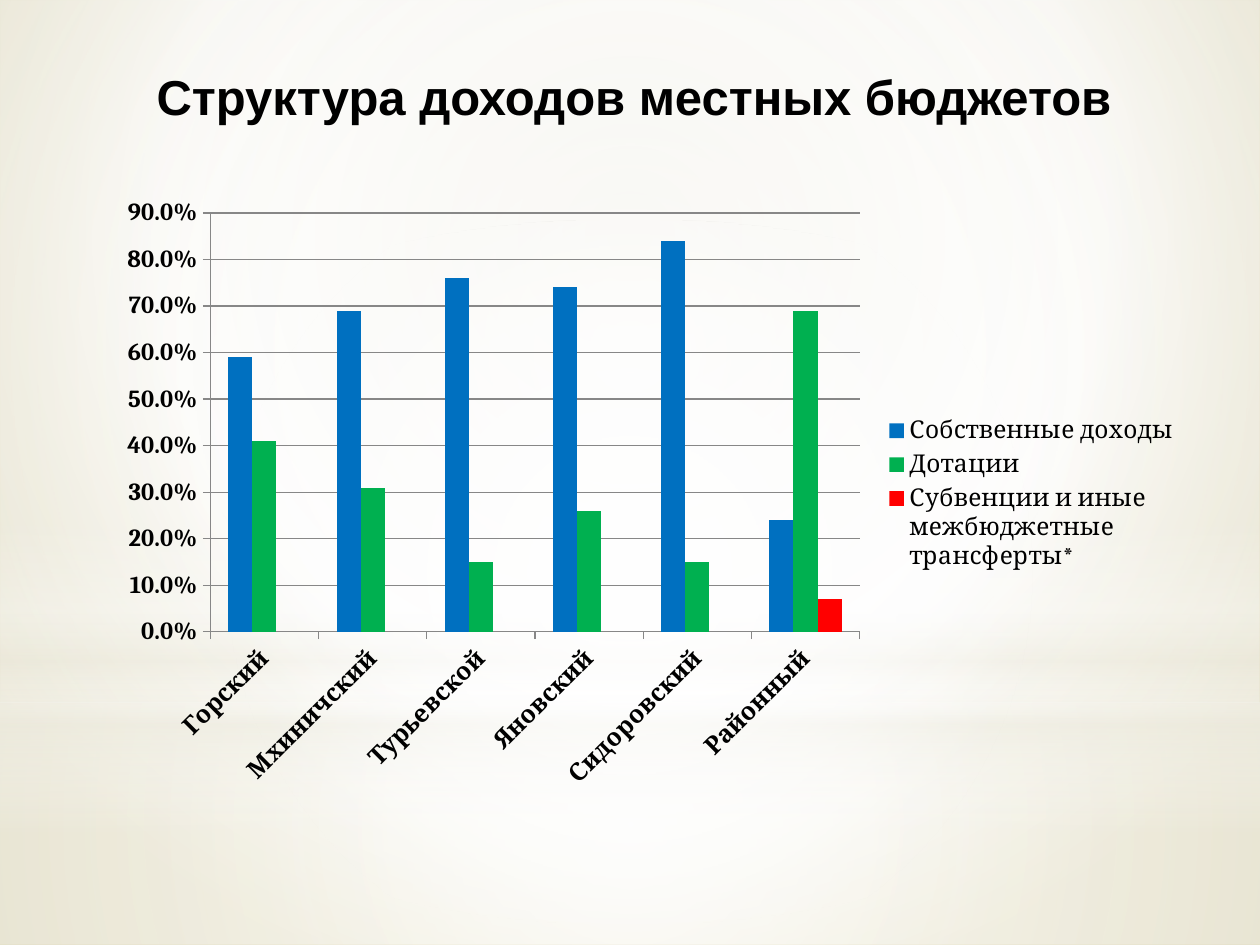
from dataclasses import dataclass

from lxml.etree import SubElement
from pptx import Presentation
from pptx.chart.data import CategoryChartData
from pptx.dml.color import RGBColor
from pptx.enum.chart import XL_CHART_TYPE, XL_LEGEND_POSITION, XL_TICK_MARK
from pptx.enum.shapes import MSO_SHAPE
from pptx.enum.text import MSO_ANCHOR, PP_ALIGN
from pptx.oxml.ns import qn
from pptx.util import Pt


@dataclass(frozen=True)
class Theme:
    white: str = "FFFFFF"
    cream: str = "EEECE1"
    sand: str = "E7E4D4"
    khaki: str = "D5CC9F"
    text: str = "000000"
    grid: str = "878787"
    series: tuple = ("0070C0", "00B050", "FF0000")
    title_font: str = "Arial"
    chart_font: str = "Cambria"
    title_size: int = 28
    label_size: int = 14


T = Theme()
W, H = 1260, 945
CENTRE = (50, 50, 50, 50)
GLOWS = [
    (MSO_SHAPE.RECTANGLE, (0, 703, W, 242),
     [(0, T.white, 91), (37, T.white, 76), (100, T.cream, 79)], CENTRE),
    (MSO_SHAPE.RECTANGLE, (0, 0, W, 703),
     [(0, T.white, 89), (48, T.white, 62), (100, T.cream, 79)], CENTRE),
    (MSO_SHAPE.RECTANGLE, (0, 519, W, 315),
     [(0, T.white, 0), (29, T.white, 30), (45, T.cream, 40),
      (55, T.white, 26), (65, T.cream, 60), (100, T.white, 0)], None),
    (MSO_SHAPE.OVAL, (0, 220, W, 703),
     [(0, T.white, 100), (56, T.white, 0)], CENTRE),
]
DISTRICTS = ["Горский", "Мхиничский", "Турьевской", "Яновский", "Сидоровский", "Районный"]
INCOME = {
    "Собственные доходы": [0.59, 0.69, 0.76, 0.74, 0.84, 0.24],
    "Дотации": [0.41, 0.31, 0.15, 0.26, 0.15, 0.69],
    "Субвенции и иные межбюджетные трансферты*": [None] * 5 + [0.07],
}


def px(n):
    return round(n * 914400 / 126)


def rgb(color):
    return RGBColor.from_string(color)


def set_gradient(fill, owner, stops, focus):
    fill.gradient()
    grad = next(owner.iter(qn("a:gradFill")))
    for child in list(grad):
        grad.remove(child)
    gs_list = SubElement(grad, qn("a:gsLst"))
    for pos, color, opacity in stops:
        gs = SubElement(gs_list, qn("a:gs"), pos=str(pos * 1000))
        clr = SubElement(gs, qn("a:srgbClr"), val=color)
        SubElement(clr, qn("a:alpha"), val=str(opacity * 1000))
    if focus:
        circle = SubElement(grad, qn("a:path"), path="circle")
        sides = {side: str(v * 1000) for side, v in zip("ltrb", focus)}
        SubElement(circle, qn("a:fillToRect"), **sides)
    else:
        SubElement(grad, qn("a:lin"), ang="5400000", scaled="0")


def add_backdrop(s):
    stops = [(0, T.sand, 100), (60, T.white, 100), (100, T.khaki, 100)]
    set_gradient(s.background.fill, s.element, stops, (20, 10, 20, 60))
    for kind, box, stops, focus in GLOWS:
        sp = s.shapes.add_shape(kind, *map(px, box))
        sp.shadow.inherit = False
        sp.line.fill.background()
        set_gradient(sp.fill, sp.element, stops, focus)


def add_title(s, box, text):
    sp = s.shapes.title
    sp.left, sp.top, sp.width, sp.height = map(px, box)
    s.shapes.element.append(sp.element)
    tf = sp.text_frame
    tf.text = text
    tf.word_wrap = True
    tf.vertical_anchor = MSO_ANCHOR.TOP
    tf.margin_top = px(11)
    p = tf.paragraphs[0]
    p.alignment = PP_ALIGN.LEFT
    p.font.name = T.title_font
    p.font.size = Pt(T.title_size)
    p.font.bold = True
    p.font.color.rgb = rgb(T.text)


def place_plot(chart, box, plot):
    area = chart.element.chart.plotArea
    for old in area.findall(qn("c:layout")):
        area.remove(old)
    layout = SubElement(area, qn("c:layout"))
    area.insert(0, layout)
    manual = SubElement(layout, qn("c:manualLayout"))
    left, top, width, height = box
    x, y, w, h = plot
    SubElement(manual, qn("c:layoutTarget"), val="inner")
    for name in "xy":
        SubElement(manual, qn(f"c:{name}Mode"), val="edge")
    shares = (x / width, y / height, w / width, h / height)
    for name, share in zip("xywh", shares):
        SubElement(manual, qn(f"c:{name}"), val=f"{share:.3f}")


def style_axis(axis):
    axis.major_tick_mark = XL_TICK_MARK.OUTSIDE
    axis.minor_tick_mark = XL_TICK_MARK.NONE
    axis.format.line.color.rgb = rgb(T.grid)
    axis.tick_labels.font.size = Pt(T.label_size)
    axis.tick_labels.font.bold = True


def add_income_chart(s, box):
    data = CategoryChartData(number_format="0.0%")
    data.categories = DISTRICTS
    for name, values in INCOME.items():
        data.add_series(name, values)
    chart = s.shapes.add_chart(XL_CHART_TYPE.COLUMN_CLUSTERED, *map(px, box), data).chart
    chart.has_title = False
    chart.font.name = T.chart_font
    chart.font.size = Pt(T.label_size)
    chart.font.color.rgb = rgb(T.text)
    place_plot(chart, box, (104, 27, 649, 419))

    bars = chart.plots[0]
    bars.vary_by_categories = False
    bars.gap_width = 150
    bars.overlap = 0
    for series, color in zip(bars.series, T.series):
        series.format.fill.solid()
        series.format.fill.fore_color.rgb = rgb(color)

    districts, share = chart.category_axis, chart.value_axis
    style_axis(districts)
    style_axis(share)
    districts.tick_labels.font.fill.solid()
    districts.tick_labels.font.color.rgb = rgb(T.text)
    districts._element.txPr.bodyPr.set("rot", "-2700000")
    share.minimum_scale, share.maximum_scale, share.major_unit = 0, 0.9, 0.1
    share.tick_labels.number_format = "0.0%"
    share.tick_labels.number_format_is_linked = False
    share.has_major_gridlines = True
    share.major_gridlines.format.line.color.rgb = rgb(T.grid)

    chart.has_legend = True
    chart.legend.position = XL_LEGEND_POSITION.RIGHT
    chart.legend.include_in_layout = False
    chart.legend.font.size = Pt(T.label_size)


def main():
    prs = Presentation()
    prs.slide_width, prs.slide_height = px(W), px(H)
    s = prs.slides.add_slide(prs.slide_layouts[5])
    add_backdrop(s)
    add_title(s, (144, 55, 1052, 131), "Структура доходов местных бюджетов")
    add_income_chart(s, (106, 186, 1086, 615))
    prs.save("out.pptx")


if __name__ == "__main__":
    main()
